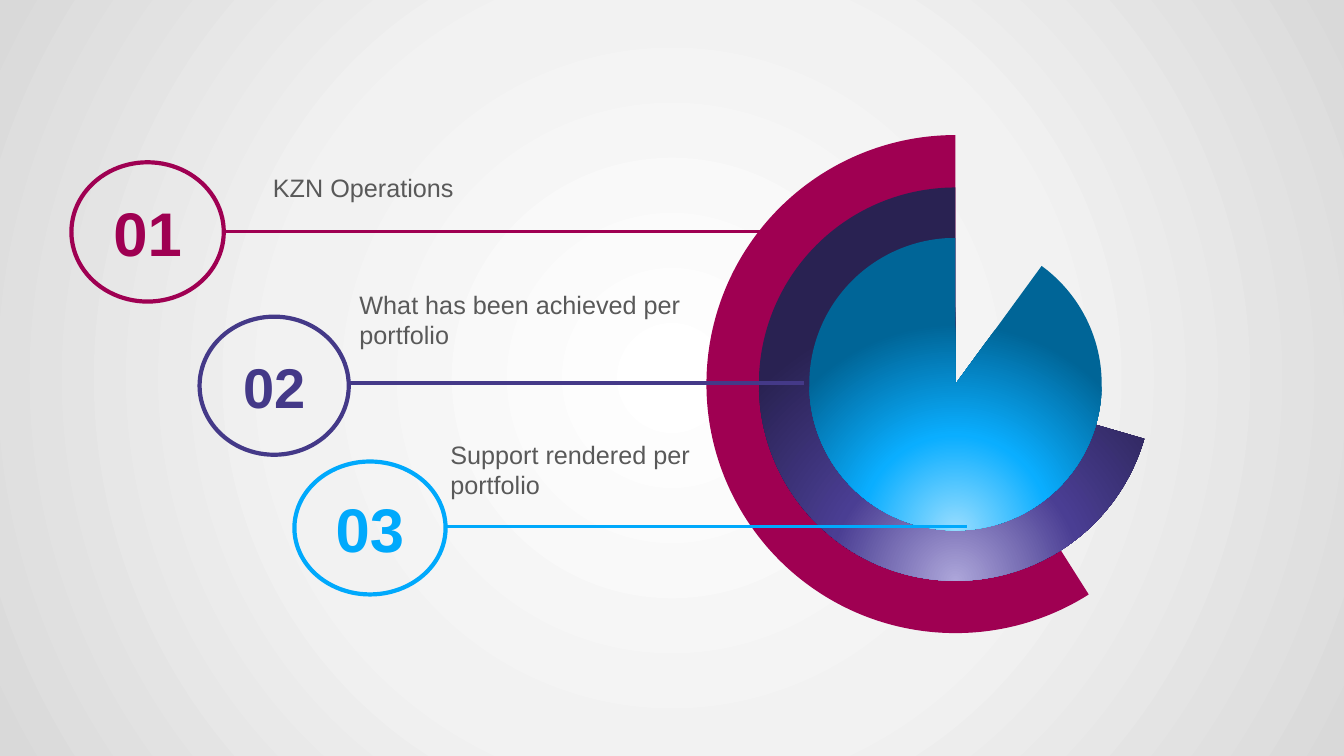
import pptx
import pptx.util
import pptx.dml.color
import pptx.enum.shapes
import pptx.enum.text
import pptx.oxml
import pptx.oxml.ns

Cm = pptx.util.Cm
Pt = pptx.util.Pt
qn = pptx.oxml.ns.qn
SHAPE = pptx.enum.shapes.MSO_SHAPE

COLOURS = {
    "crimson": "9F0052",
    "violet": "443988",
    "sky": "00A9FC",
    "body": "595959",
}
GRADIENTS = {
    "backdrop": [(0, "FFFFFF"), (50, "F2F2F2"), (100, "D9D9D9")],
    "violet": [(0, "ADA6DA"), (46, "4A3E93"), (100, "292252")],
    "sky": [(0, "98DDFF"), (46, "0AAEFF"), (100, "006597")],
}
FONT = "Arial"
DIAL_CENTRE = (24.08, 9.68)

DIAL_RINGS = [
    (12.55, 57.64, "crimson"),
    (9.91, 16.15, "violet"),
    (7.37, 306.1, "sky"),
]
TOPICS = [
    ("01", 44, "crimson", (1.8, 4.09, 3.84, 3.51), 5.84, 20.14,
     "KZN Operations", (6.63, 4.22, 8.03, 1.02)),
    ("02", 40, "violet", (5.03, 7.98, 3.76, 3.48), 9.65, 20.27,
     "What has been achieved per portfolio", (8.81, 7.16, 9.88, 1.8)),
    ("03", 44, "sky", (7.42, 11.63, 3.81, 3.35), 13.26, 24.36,
     "Support rendered per portfolio", (11.1, 10.95, 8.03, 1.8)),
]


def rgb(name):
    return pptx.dml.color.RGBColor.from_string(COLOURS[name])


def fill_radial(fill, properties, stops, focus_y):
    fill.solid()
    stop_xml = "".join(
        f'<a:gs pos="{position * 1000}"><a:srgbClr val="{colour}"/></a:gs>'
        for position, colour in stops
    )
    gradient = pptx.oxml.parse_xml(
        f'<a:gradFill {pptx.oxml.ns.nsdecls("a")} rotWithShape="1">'
        f'<a:gsLst>{stop_xml}</a:gsLst><a:path path="circle">'
        f'<a:fillToRect l="50000" t="{focus_y * 1000}" r="50000" '
        f'b="{(100 - focus_y) * 1000}"/></a:path></a:gradFill>'
    )
    properties.replace(properties.find(qn("a:solidFill")), gradient)


def format_text(frame, text, size, colour, bold=False):
    frame.text = text
    font = frame.paragraphs[0].runs[0].font
    font.name = FONT
    font.size = Pt(size)
    font.bold = bold
    font.color.rgb = rgb(colour)


def add_ring(dial, diameter, start_angle, colour):
    left, top = (centre - diameter / 2 for centre in DIAL_CENTRE)
    ring = dial.shapes.add_shape(
        SHAPE.PIE, Cm(left), Cm(top), Cm(diameter), Cm(diameter))
    ring.shadow.inherit = False
    ring.adjustments[0] = start_angle * 0.6
    ring.adjustments[1] = 270 * 0.6
    if colour in GRADIENTS:
        fill_radial(ring.fill, ring.element.spPr, GRADIENTS[colour], 130)
    else:
        ring.fill.solid()
        ring.fill.fore_color.rgb = rgb(colour)
    ring.line.fill.background()


def add_leader(marker, start_x, end_x, y, colour):
    leader = marker.shapes.add_connector(
        pptx.enum.shapes.MSO_CONNECTOR.STRAIGHT,
        Cm(start_x), Cm(y), Cm(end_x), Cm(y))
    leader.line.color.rgb = rgb(colour)
    leader.line.width = Pt(2.25)
    leader.element.spPr.append(pptx.oxml.parse_xml(
        f'<a:effectLst {pptx.oxml.ns.nsdecls("a")}/>'))


def add_badge(marker, number, size, colour, box):
    badge = marker.shapes.add_shape(SHAPE.OVAL, *map(Cm, box))
    badge.shadow.inherit = False
    badge.fill.background()
    badge.line.color.rgb = rgb(colour)
    badge.line.width = Pt(3)
    frame = badge.text_frame
    format_text(frame, number, size, colour, bold=True)
    frame.vertical_anchor = pptx.enum.text.MSO_ANCHOR.MIDDLE
    frame.paragraphs[0].alignment = pptx.enum.text.PP_ALIGN.CENTER


def add_caption(slide, text, box):
    caption = slide.shapes.add_textbox(*map(Cm, box))
    frame = caption.text_frame
    frame.word_wrap = True
    frame.auto_size = pptx.enum.text.MSO_AUTO_SIZE.SHAPE_TO_FIT_TEXT
    format_text(frame, text, 18, "body")


def main():
    deck = pptx.Presentation()
    deck.slide_width, deck.slide_height = Cm(33.87), Cm(19.05)
    slide = deck.slides.add_slide(deck.slide_layouts[6])
    backdrop = slide.background.fill
    backdrop.solid()
    fill_radial(backdrop, slide.element.find(f".//{qn('p:bgPr')}"),
                GRADIENTS["backdrop"], 50)

    dial = slide.shapes.add_group_shape()
    for diameter, start_angle, colour in DIAL_RINGS:
        add_ring(dial, diameter, start_angle, colour)

    for number, size, colour, badge_box, y, end_x, text, text_box in TOPICS:
        marker = slide.shapes.add_group_shape()
        add_leader(marker, badge_box[0] + badge_box[2], end_x, y, colour)
        add_badge(marker, number, size, colour, badge_box)
        add_caption(slide, text, text_box)

    deck.save("out.pptx")


if __name__ == "__main__":
    main()
